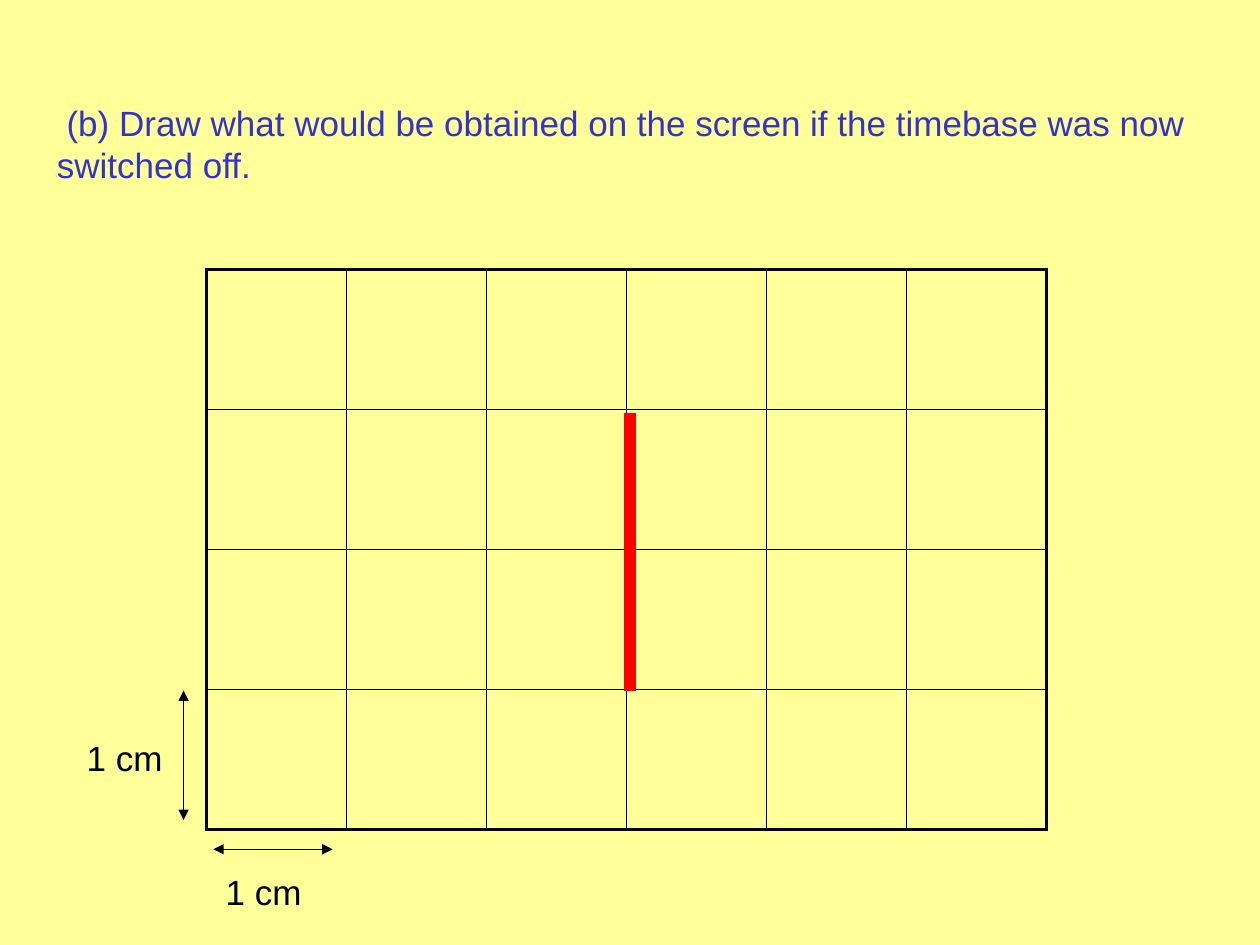
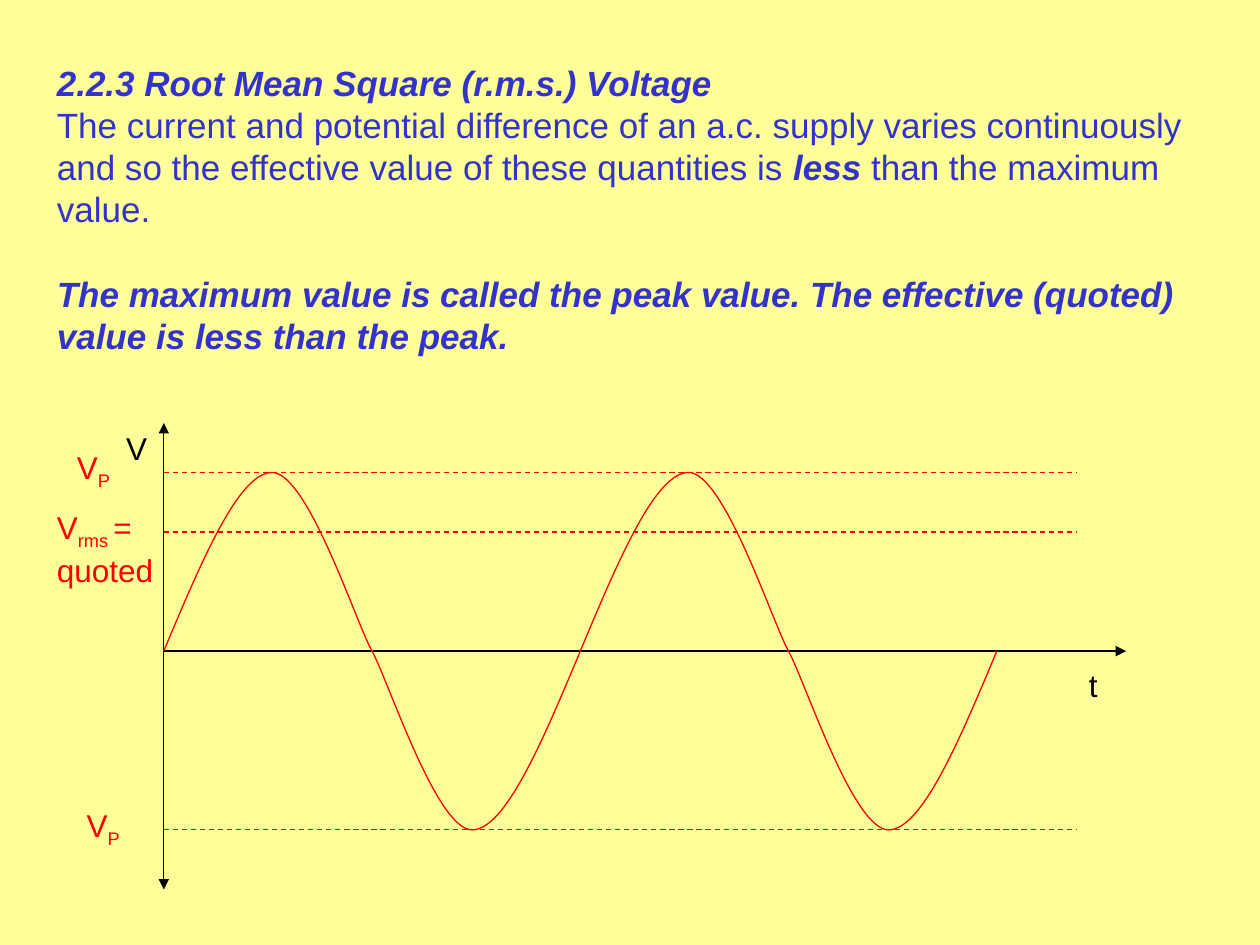
"""Build two slides on oscilloscope traces and r.m.s. voltage."""
from pptx import Presentation
from pptx.dml.color import RGBColor
from pptx.enum.dml import MSO_LINE
from pptx.enum.shapes import MSO_CONNECTOR
from pptx.enum.text import MSO_AUTO_SIZE
from pptx.oxml import parse_xml
from pptx.oxml.ns import nsdecls
from pptx.util import Pt

STRAIGHT = MSO_CONNECTOR.STRAIGHT
DASH = MSO_LINE.DASH
FIT = MSO_AUTO_SIZE.SHAPE_TO_FIT_TEXT
FONT = "Arial"
COLORS = {"back": "FFFF99", "body": "3333CC", "ink": "000000", "red": "FF0000"}
RGB = {name: RGBColor.from_string(value) for name, value in COLORS.items()}


def add_text(s, box, paragraphs, size, color):
    """Add a text box; each run is (text, style), style being "", "bold" or "sub"."""
    sp = s.shapes.add_textbox(*map(Pt, box))
    tf = sp.text_frame
    tf.word_wrap = True
    tf.auto_size = FIT
    for i, runs in enumerate(paragraphs):
        p = tf.add_paragraph() if i else tf.paragraphs[0]
        p.font.name, p.font.size = FONT, Pt(size)
        p.font.color.rgb = RGB[color]
        for text, style in runs:
            r = p.add_run()
            r.text = text
            if style == "bold":
                r.font.bold = r.font.italic = True
            elif style == "sub":
                r.font._element.set("baseline", "-25000")
    return tf


def add_line(s, x1, y1, x2, y2, color="ink", width=0.75, arrows=(), dash=None):
    """Add a straight line with optional arrowheads and dashes."""
    sp = s.shapes.add_connector(STRAIGHT, Pt(x1), Pt(y1), Pt(x2), Pt(y2))
    sp.line.color.rgb = RGB[color]
    sp.line.width = Pt(width)
    if dash:
        sp.line.dash_style = dash
    for end in arrows:
        sp.line._get_or_add_ln().append(
            parse_xml(f'<a:{end} {nsdecls("a")} type="triangle"/>'))
    sp._element.spPr.append(parse_xml(f'<a:effectLst {nsdecls("a")}/>'))


prs = Presentation()
prs.slide_width, prs.slide_height = Pt(720), Pt(540)
slides = []
for _ in range(2):
    s = prs.slides.add_slide(prs.slide_layouts[6])
    s.background.fill.solid()
    s.background.fill.fore_color.rgb = RGB["back"]
    slides.append(s)
screen, rms = slides
BOTH = ("headEnd", "tailEnd")

add_text(screen, (25.4, 54.7, 663, 55.4),
         [[(" (b) Draw what would be obtained on the screen if the timebase "
            "was now switched off.", "")]], 20, "body")

ROWS, COLS, CELL = 4, 6, 80
frame = screen.shapes.add_table(ROWS, COLS, Pt(118.1), Pt(153.9),
                                Pt(COLS * CELL), Pt(ROWS * CELL))
grid = frame.table
grid.first_row = grid.horz_banding = False
for row in range(ROWS):
    for col in range(COLS):
        cell = grid.cell(row, col)
        cell.fill.background()
        outer = {"L": col == 0, "R": col == COLS - 1,
                 "T": row == 0, "B": row == ROWS - 1}
        for i, (side, is_outer) in enumerate(outer.items()):
            width = Pt(2.25 if is_outer else 1)
            cell._tc.get_or_add_tcPr().insert(i, parse_xml(
                f'<a:ln{side} {nsdecls("a")} w="{width}"><a:solidFill>'
                f'<a:srgbClr val="{COLORS["ink"]}"/></a:solidFill></a:ln{side}>'))

for x, y in ((121.9, 493.9), (42.5, 417.6)):
    add_text(screen, (x, y, 79.2, 31), [[("1 cm", "")]], 20, "ink")
add_line(screen, 121.9, 485.3, 190.1, 485.3, arrows=BOTH)
add_line(screen, 104.9, 394.6, 104.9, 468.6, arrows=BOTH)
add_line(screen, 360, 236.2, 360, 394.6, "red", 6.5)

tf = add_text(rms, (25.4, 31.7, 669, 175), [
    [("2.2.3 Root Mean Square (r.m.s.) Voltage", "bold")],
    [("The current and potential difference of an a.c. supply varies continuously "
      "and so the effective value of these quantities is ", ""),
     ("less", "bold"), (" than the maximum value.", "")],
    [("The maximum value is called the peak value. The effective (quoted) "
      "value is less than the peak.", "bold")]], 20, "body")
tf.paragraphs[2].space_before = Pt(24.3)

AXIS_X, AXIS_Y, PEAK, HALF = 93.6, 372.1, 102.1, 119
add_line(rms, AXIS_X, 241.7, AXIS_X, 508.3, arrows=BOTH)
add_line(rms, AXIS_X, AXIS_Y, 643.5, AXIS_Y, arrows=("tailEnd",))
for name, x, y in (("V", 65, 241.9), ("t", 615.1, 377.3)):
    add_text(rms, (x, y, 62.6, 28.8), [[(name, "")]], 18, "ink")
for x, y in ((42.5, 457.2), (36.9, 252.7)):
    add_text(rms, (x, y, 62.6, 28.8), [[("V", ""), ("P", "sub")]], 18, "red")
add_text(rms, (25.4, 287, 79.2, 50.4),
         [[("V", ""), ("rms ", "sub"), ("= quoted", "")]], 18, "red")

ARCH = ((0, 0), (0.18, 0.5), (0.36, 1), (0.52, 1), (0.69, 1), (0.92, 0.17), (1, 0))
for half in range(4):
    below = half % 2
    base = AXIS_Y + below * PEAK
    points = [(Pt(AXIS_X + (half + u) * HALF), Pt(base - v * PEAK)) for u, v in ARCH]
    wave = rms.shapes.build_freeform(*points[0])
    wave.add_line_segments(points[1:], close=False)
    sp = wave.convert_to_shape()
    segments = sp._element.xpath(".//a:lnTo")
    for i in (0, 3):
        curve = parse_xml(f'<a:cubicBezTo {nsdecls("a")}/>')
        segments[i].addprevious(curve)
        for segment in segments[i:i + 3]:
            curve.append(segment[0])
            segment.getparent().remove(segment)
    sp.rotation = 180 * below
    sp.shadow.inherit = False
    sp.fill.background()
    sp.line.color.rgb = RGB["red"]
    sp.line.width = Pt(0.75)

for y in (AXIS_Y - PEAK, 304.1, AXIS_Y + PEAK):
    add_line(rms, AXIS_X, y, 614.9, y, "red", dash=DASH)

prs.save("out.pptx")
